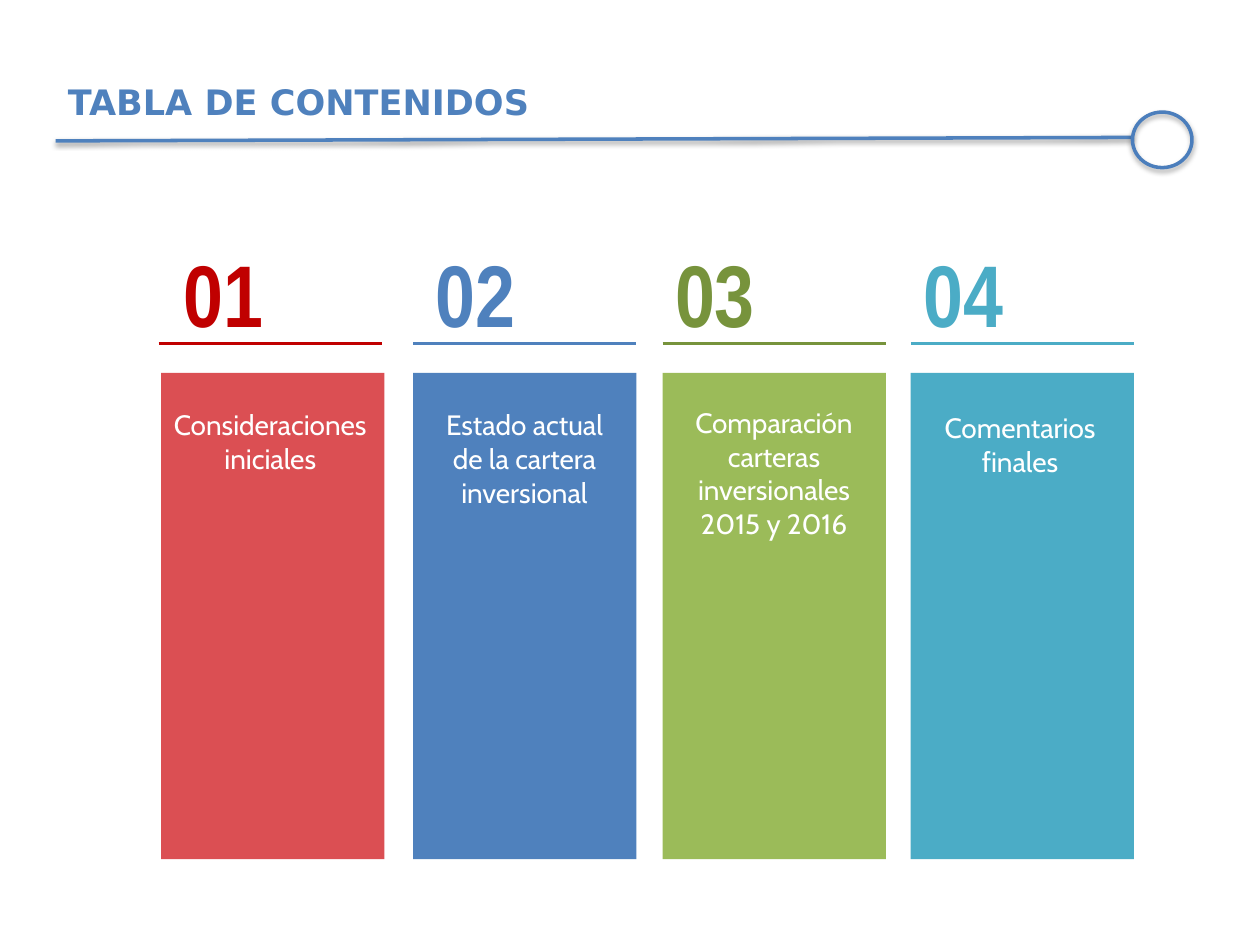
from lxml.etree import SubElement
from pptx import Presentation
from pptx.dml.color import RGBColor
from pptx.enum.shapes import MSO_CONNECTOR, MSO_SHAPE
from pptx.enum.text import MSO_AUTO_SIZE, PP_ALIGN
from pptx.oxml.ns import qn
from pptx.util import Cm, Pt

TITLE = "TABLA DE CONTENIDOS"
BLUE = "4F81BD"

# number, label, bar colour, number colour, bar left,
# rule left, number left, label (left, top, width, height)
COLUMNS = [
    ("01", "Consideraciones iniciales", "DB4F53", "C00000",
     3.25, 3.2, 3.45, (3.1, 8.1, 4.7, 2.31)),
    ("02", "Estado actual de la cartera inversional", BLUE, BLUE,
     8.33, 8.33, 8.53, (8.48, 8.1, 4.19, 3)),
    ("03", "Comparación carteras inversionales 2015 y 2016", "9BBB59", "77933C",
     13.36, 13.36, 13.36, (13.51, 8.05, 4.19, 3)),
    ("04", "Comentarios finales", "4BACC6", "4BACC6",
     18.36, 18.36, 18.36, (18.47, 8.15, 4.19, 2.31)),
]
COLUMN_W = 4.5
BAR_TOP, BAR_H = 7.52, 9.8
RULE_Y = 6.93
NUMBER_TOP, NUMBER_W, NUMBER_H = 4.72, 2.21, 2.39


def rgb(value):
    return RGBColor.from_string(value)


def add_text(box, text, font, size, color, bold=False, align=None, grow=True):
    tf = s.shapes.add_textbox(*map(Cm, box)).text_frame
    tf.word_wrap = True
    if grow:
        tf.auto_size = MSO_AUTO_SIZE.SHAPE_TO_FIT_TEXT
    p = tf.paragraphs[0]
    p.alignment = align
    r = p.add_run()
    r.text = text
    r.font.name, r.font.size, r.font.bold = font, Pt(size), bold
    r.font.color.rgb = rgb(color)


def add_line(x1, y1, x2, y2, color, width):
    line = s.shapes.add_connector(MSO_CONNECTOR.STRAIGHT, *map(Cm, (x1, y1, x2, y2)))
    line.line.color.rgb = rgb(color)
    line.line.width = Pt(width)
    SubElement(line._element.spPr, qn("a:effectLst"))
    return line


def add_shadow(shape, opacity, distance):
    effects = shape._element.spPr.find(qn("a:effectLst"))
    shadow = SubElement(effects, qn("a:outerShdw"), blurRad=str(Pt(3.1)),
                        dist=str(Pt(distance)), dir="5400000", rotWithShape="0")
    color = SubElement(shadow, qn("a:srgbClr"), val="000000")
    SubElement(color, qn("a:alpha"), val=str(opacity * 1000))


prs = Presentation()
prs.slide_width, prs.slide_height = Cm(25.4), Cm(19.05)
s = prs.slides.add_slide(prs.slide_layouts[6])

# Columns: bar, rule, number and label
for number, label, fill, accent, bar_x, rule_x, number_x, label_box in COLUMNS:
    bar = s.shapes.add_shape(MSO_SHAPE.RECTANGLE, Cm(bar_x), Cm(BAR_TOP),
                             Cm(COLUMN_W), Cm(BAR_H))
    bar.shadow.inherit = False
    bar.fill.solid()
    bar.fill.fore_color.rgb = rgb(fill)
    bar.line.fill.background()
    add_line(rule_x, RULE_Y, rule_x + COLUMN_W, RULE_Y, accent, 1.5)
    add_text((number_x, NUMBER_TOP, NUMBER_W, NUMBER_H), number,
             "Arial Narrow", 50, accent, bold=True)
    add_text(label_box, label, "Cabin", 16, "FFFFFF", align=PP_ALIGN.CENTER)

# Header: line ending in a ring, then the title
header_line = add_line(1.12, 2.84, 22.83, 2.77, BLUE, 2)
add_shadow(header_line, 38, 1.6)
ring = s.shapes.add_shape(MSO_SHAPE.OVAL, Cm(22.83), Cm(2.26), Cm(1.2), Cm(1.12))
ring.shadow.inherit = False
ring.fill.background()
ring.line.color.rgb = rgb("4B7EBC")
ring.line.width = Pt(2)
add_shadow(ring, 35, 1.8)
add_text((1.12, 1.5, 23.14, 1.73), TITLE, "DejaVu Sans", 20, BLUE,
         bold=True, grow=False)

prs.save("out.pptx")
